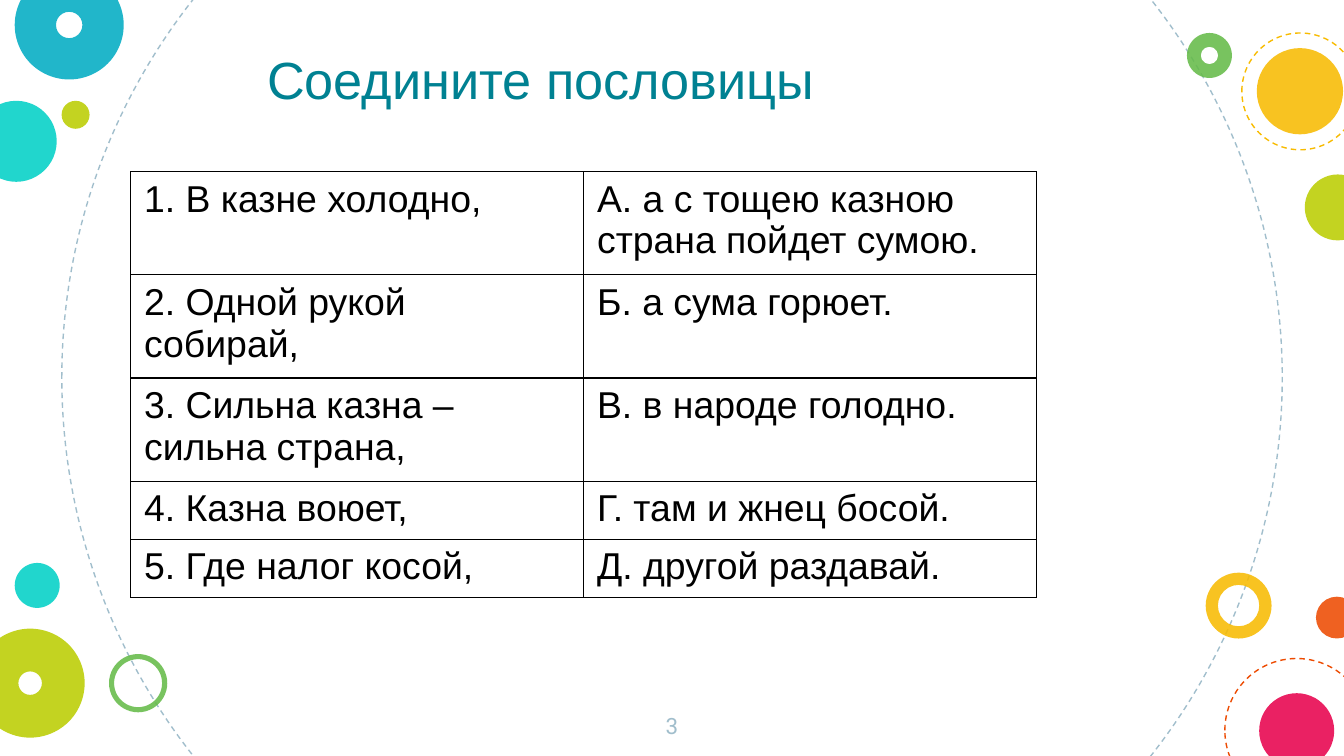
from lxml import etree
from pptx import Presentation
from pptx.dml.color import RGBColor
from pptx.enum import dml, shapes, text
from pptx.oxml.ns import qn
from pptx.util import Pt


def rgb(value):
    return RGBColor.from_string(value)


def format_run(p, size, font, color):
    r = p.runs[0]
    r.font.size = Pt(size)
    r.font.name = font
    r.font.color.rgb = rgb(color)


TEAL, CYAN, LIME, GREEN = "00D1C6", "00ACC3", "BBCD00", "65BB48"
YELLOW, ORANGE, PINK, GRAY = "F8BB00", "ED4A00", "E8004C", "A1BECC"

prs = Presentation()
prs.slide_width, prs.slide_height = Pt(720), Pt(405)
s = prs.slides.add_slide(prs.slide_layouts[5])

# Circles: left, top, diameter, colour, then "dash", ring thickness or None for a disc
circles = [
    (33.1, -124.6, 653.8, GRAY, "dash"),
    (-13, 54, 43.4, TEAL, None),
    (645.9, 306.8, 35.3, YELLOW, 0.186),
    (7.9, -15.8, 58.4, CYAN, 0.379),
    (33, 54, 15, LIME, None),
    (656.2, 352.8, 77, ORANGE, "dash"),
    (58.4, 350.4, 31.2, GREEN, 0.088),
    (705, 319.7, 22.4, ORANGE, None),
    (-13, 336.8, 58.4, LIME, 0.392),
    (674.6, 371.4, 40.2, PINK, None),
    (635.9, 17.7, 24.1, GREEN, 0.306),
    (673.3, 25.8, 46.2, YELLOW, None),
    (699, 93.5, 35.3, LIME, None),
    (665.3, 17.7, 62.6, YELLOW, "dash"),
    (7.9, 301.6, 24.1, TEAL, None),
]
for left, top, size, color, style in circles:
    is_ring = isinstance(style, float)
    kind = shapes.MSO_SHAPE.DONUT if is_ring else shapes.MSO_SHAPE.OVAL
    sp = s.shapes.add_shape(kind, Pt(left), Pt(top), Pt(size), Pt(size))
    sp.shadow.inherit = False
    if is_ring:
        sp.adjustments[0] = style
    if style == "dash":
        sp.fill.background()
        sp.line.color.rgb = rgb(color)
        sp.line.width = Pt(0.75)
        sp.line.dash_style = dml.MSO_LINE.DASH
    else:
        sp.line.fill.background()
        sp.fill.solid()
        sp.fill.fore_color.rgb = rgb(color)
        clr = sp.fill._xPr.find(qn("a:solidFill"))[0]
        etree.SubElement(clr, qn("a:alpha"), val="87000")

# Slide number
box = s.shapes.add_textbox(Pt(341.5), Pt(374.4), Pt(37), Pt(31))
tf = box.text_frame
tf.word_wrap = True
tf.margin_left = tf.margin_right = tf.margin_top = tf.margin_bottom = Pt(7.2)
tf.text = "3"
tf.paragraphs[0].alignment = text.PP_ALIGN.CENTER
format_run(tf.paragraphs[0], 12, "Roboto", GRAY)

# Proverb halves
proverbs = [
    ("1. В казне холодно,", "А. а с тощею казною страна пойдет сумою."),
    ("2. Одной рукой собирай,", "Б. а сума горюет."),
    ("3. Сильна казна – сильна страна,", "В. в народе голодно."),
    ("4. Казна воюет,", "Г. там и жнец босой."),
    ("5. Где налог косой,", "Д. другой раздавай."),
]
row_heights = [52, 52, 52, 29.5, 29.5]
table = s.shapes.add_table(len(proverbs), 2, Pt(70), Pt(92), Pt(485.4),
                           Pt(sum(row_heights))).table
table.first_row = table.horz_banding = False
for column in table.columns:
    column.width = Pt(242.7)
for row, height, halves in zip(table.rows, row_heights, proverbs):
    row.height = Pt(height)
    for cell, half in zip(row.cells, halves):
        cell.text = half
        format_run(cell.text_frame.paragraphs[0], 20, "Arial", "000000")
        tcPr = cell._tc.get_or_add_tcPr()
        for side in ("a:lnL", "a:lnR", "a:lnT", "a:lnB"):
            ln = etree.SubElement(tcPr, qn(side), w=str(Pt(0.75)))
            fill = etree.SubElement(ln, qn("a:solidFill"))
            etree.SubElement(fill, qn("a:srgbClr"), val="000000")
        cell.fill.background()

# Title
title = s.shapes.title
title.left, title.top, title.width, title.height = Pt(103), Pt(21.6), Pt(373), Pt(41)
tf = title.text_frame
tf.text = "Соедините пословицы"
tf.vertical_anchor = text.MSO_ANCHOR.TOP
tf.paragraphs[0].alignment = text.PP_ALIGN.CENTER
format_run(tf.paragraphs[0], 28, "Arial", "008192")

prs.save("out.pptx")
